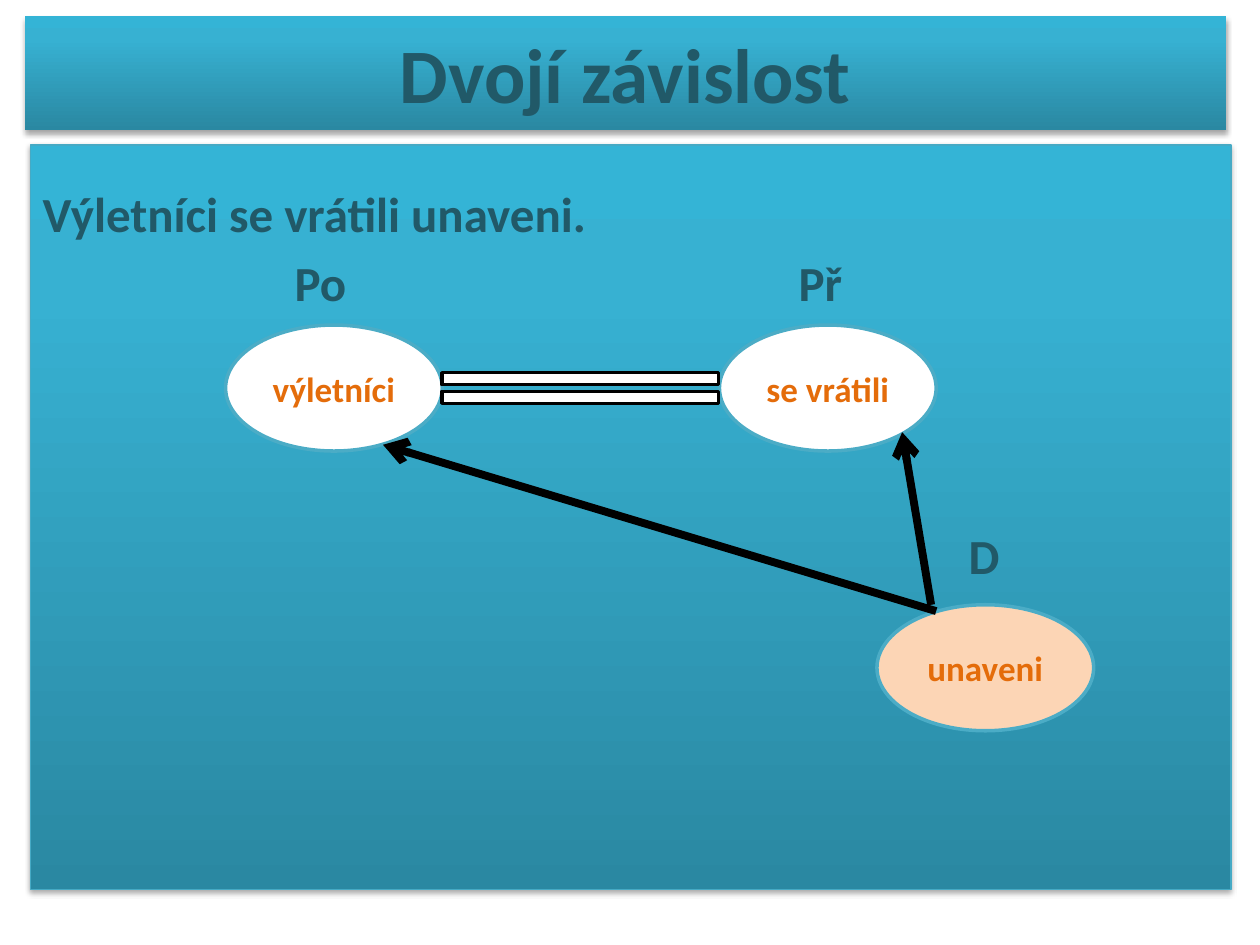
"""Sentence diagram slide showing a double dependency."""
from copy import deepcopy

from lxml import etree
from pptx import Presentation
from pptx.dml.color import RGBColor
from pptx.enum.shapes import MSO_CONNECTOR, MSO_SHAPE
from pptx.enum.text import MSO_ANCHOR, PP_ALIGN
from pptx.oxml.ns import qn
from pptx.util import Inches, Pt

RECTANGLE, OVAL, EQUAL = MSO_SHAPE.RECTANGLE, MSO_SHAPE.OVAL, MSO_SHAPE.MATH_EQUAL
STRAIGHT = MSO_CONNECTOR.STRAIGHT
LEFT, CENTER = PP_ALIGN.LEFT, PP_ALIGN.CENTER
TOP, MIDDLE = MSO_ANCHOR.TOP, MSO_ANCHOR.MIDDLE
COLUMNS, ROWS = 100, 75
FONT = "Calibri"
COLORS = {
    "heading": "215968", "word": "E46C0A", "panel_edge": "46AAC5",
    "oval_edge": "4BACC6", "white": "FFFFFF", "peach": "FCD5B5", "black": "000000",
}
PANEL_GRADIENT = [(0, "2A88A2"), (0.8, "37B1D2"), (1, "34B4D6")]


def write_text(frame, text, size=28, color="heading", align=LEFT, anchor=TOP,
               before=0, tabs=(), first=True):
    """Write one bold paragraph into a text frame."""
    frame.word_wrap = True
    frame.vertical_anchor = anchor
    paragraph = frame.paragraphs[0] if first else frame.add_paragraph()
    paragraph.alignment = align
    paragraph.space_before = Pt(before)
    run = paragraph.add_run()
    run.text = text
    run.font.name, run.font.size, run.font.bold = FONT, Pt(size), True
    run.font.color.rgb = RGBColor.from_string(COLORS[color])
    if tabs:
        tab_list = etree.SubElement(paragraph._p.get_or_add_pPr(), qn("a:tabLst"))
        for position in tabs:
            etree.SubElement(tab_list, qn("a:tab"), pos=str(Inches(position)), algn="l")


class Diagram:
    """Hold the slide, its grid and its drawing style."""

    def __init__(self, presentation):
        self.slide = presentation.slides.add_slide(presentation.slide_layouts[6])
        self.column = presentation.slide_width / COLUMNS
        self.row = presentation.slide_height / ROWS

    def place(self, column, row):
        """Turn a grid position into lengths."""
        return round(column * self.column), round(row * self.row)

    def shape(self, kind, box, fill=None, edge=None, width=2):
        """Add a preset shape on the grid."""
        shape = self.slide.shapes.add_shape(kind, *self.place(*box[:2]), *self.place(*box[2:]))
        shape.shadow.inherit = False
        if fill:
            shape.fill.solid()
            shape.fill.fore_color.rgb = RGBColor.from_string(COLORS[fill])
        if edge:
            shape.line.color.rgb = RGBColor.from_string(COLORS[edge])
            shape.line.width = Pt(width)
        else:
            shape.line.fill.background()
        return shape

    def panel(self, box, edge=None):
        """Add a rectangle with the gradient and a soft shadow."""
        shape = self.shape(RECTANGLE, box, edge=edge, width=0.75)
        shape.fill.gradient()
        shape.fill.gradient_angle = 90
        properties = shape._element.spPr
        stops = properties.find(".//" + qn("a:gsLst"))
        stops.append(deepcopy(stops[-1]))
        for stop, (position, color) in zip(shape.fill.gradient_stops, PANEL_GRADIENT):
            stop.position = position
            stop.color.rgb = RGBColor.from_string(color)
        shadow = etree.SubElement(
            properties.find(qn("a:effectLst")), qn("a:outerShdw"), blurRad=str(Pt(3.1)),
            dist=str(Pt(1.8)), dir="5400000", rotWithShape="0")
        shade = etree.SubElement(shadow, qn("a:srgbClr"), val=COLORS["black"])
        etree.SubElement(shade, qn("a:alpha"), val="35000")
        return shape

    def word(self, text, column, row, fill="white"):
        """Add an oval that holds a word of the sentence."""
        shape = self.shape(OVAL, (column, row, 17.2, 10), fill, "oval_edge")
        write_text(shape.text_frame, text, size=20, color="word", align=CENTER, anchor=MIDDLE)

    def equal_sign(self, box):
        """Add the double bar between subject and predicate."""
        shape = self.shape(EQUAL, box, "white", "black")
        shape.adjustments[0], shape.adjustments[1] = 0.235, 0.138

    def arrow(self, start, end):
        """Add a thick arrow from start to end."""
        connector = self.slide.shapes.add_connector(
            STRAIGHT, *self.place(*start), *self.place(*end))
        connector.line.color.rgb = RGBColor.from_string(COLORS["black"])
        connector.line.width = Pt(4.5)
        etree.SubElement(connector.line._get_or_add_ln(), qn("a:tailEnd"), type="arrow")
        etree.SubElement(connector._element.spPr, qn("a:effectLst"))


def main():
    """Build and save the slide."""
    presentation = Presentation()
    presentation.slide_width, presentation.slide_height = Inches(10), Inches(7.5)
    diagram = Diagram(presentation)

    title = diagram.panel((2, 1.3, 95.3, 9))
    write_text(title.text_frame, "Dvojí závislost", size=44, align=CENTER, anchor=MIDDLE)

    body = diagram.panel((2.4, 11.5, 95.3, 59.1), edge="panel_edge").text_frame
    body.margin_top = Inches(0.31)
    write_text(body, "Výletníci se vrátili unaveni.")
    write_text(body, "\tPo\tPř", before=5.6, tabs=(2, 6), first=False)
    write_text(body, "\tD", before=122.4, tabs=(7.35,), first=False)

    diagram.word("výletníci", 17.9, 25.8)
    diagram.word("se vrátili", 57.1, 25.8)
    diagram.word("unaveni", 69.6, 48, fill="peach")
    diagram.equal_sign((31.1, 28.8, 29.9, 4))
    diagram.arrow((74.3, 48.5), (30.4, 35.3))
    diagram.arrow((73.9, 48), (71.6, 34.3))
    presentation.save("out.pptx")


if __name__ == "__main__":
    main()
